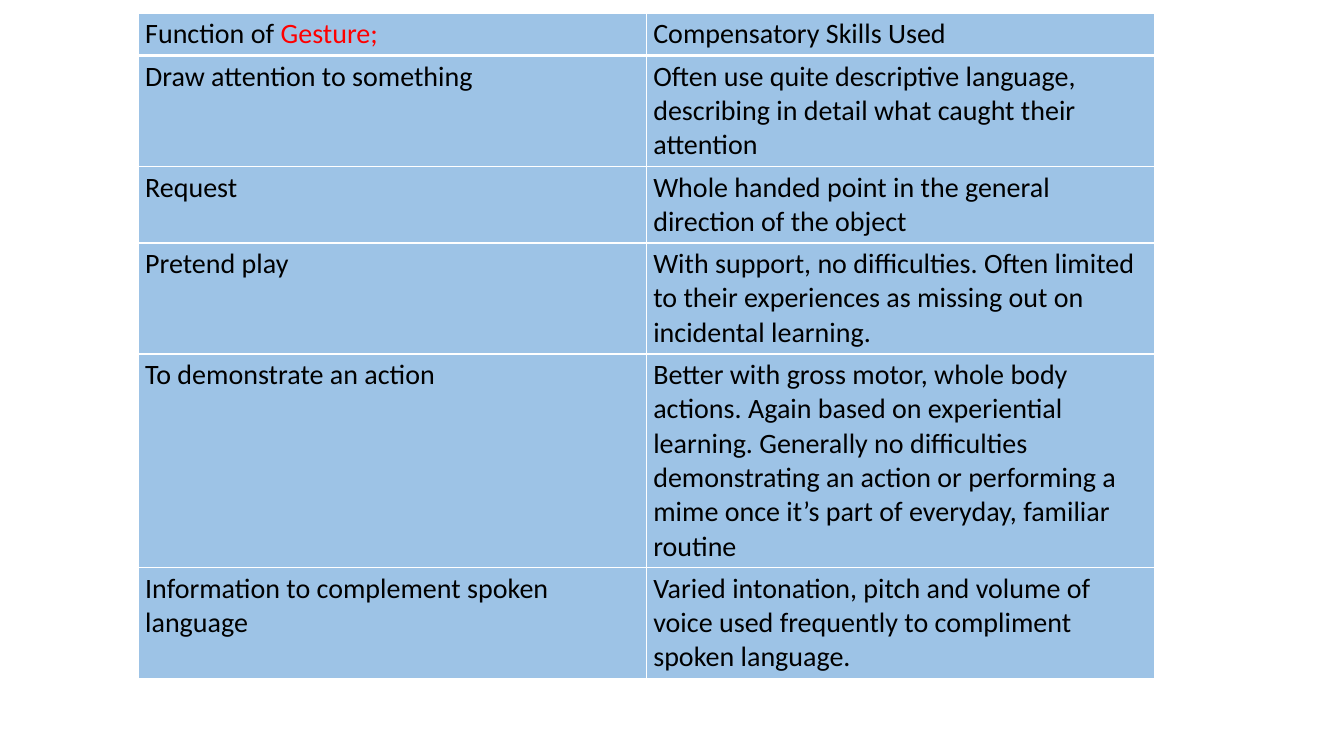
from lxml.etree import SubElement
from pptx import Presentation
from pptx.dml.color import RGBColor
from pptx.oxml.ns import qn
from pptx.util import Inches, Pt

BLACK = RGBColor(0x00, 0x00, 0x00)
RED = RGBColor(0xFF, 0x00, 0x00)
WHITE = RGBColor(0xFF, 0xFF, 0xFF)
SKY = RGBColor(0x9D, 0xC3, 0xE6)

COL_W = 5.04
LINE_H, ROW_PAD = 0.27, 0.09

# Lines of text, function of gesture, compensatory skill
ROWS = [
    (1, "Function of ", "Compensatory Skills Used"),
    (3, "Draw attention to something",
     "Often use quite descriptive language, describing in detail what caught their attention"),
    (2, "Request", "Whole handed point in the general direction of the object"),
    (3, "Pretend play",
     "With support, no difficulties. Often limited to their experiences as missing out on "
     "incidental learning."),
    (6, "To demonstrate an action",
     "Better with gross motor, whole body actions. Again based on experiential learning. "
     "Generally no difficulties demonstrating an action or performing a mime once it’s part "
     "of everyday, familiar routine"),
    (3, "Information to complement spoken language",
     "Varied intonation, pitch and volume of voice used frequently to compliment spoken "
     "language."),
]


def add_text(p, text, size=20, color=BLACK, font="Calibri"):
    r = p.add_run()
    r.text = text
    r.font.size = Pt(size)
    r.font.name = font
    r.font.bold = False
    r.font.color.rgb = color


def set_borders(cell, bottom=1):
    """Draw white lines on all four sides; bottom is a width in points."""
    tcPr = cell._tc.get_or_add_tcPr()
    for side, width in (("L", 1), ("R", 1), ("T", 1), ("B", bottom)):
        ln = SubElement(tcPr, qn(f"a:ln{side}"), w=str(Pt(width)))
        fill = SubElement(ln, qn("a:solidFill"))
        SubElement(fill, qn("a:srgbClr"), val=str(WHITE))


prs = Presentation()
prs.slide_width, prs.slide_height = Inches(13.33), Inches(7.5)
s = prs.slides.add_slide(prs.slide_layouts[6])

frame = s.shapes.add_table(len(ROWS), 2, Inches(1.37), Inches(0.13),
                           Inches(2 * COL_W), Inches(6.45))
table = frame.table
table.horz_banding = False

for i, (lines, *texts) in enumerate(ROWS):
    table.rows[i].height = Inches(ROW_PAD + LINE_H * lines)
    for j, text in enumerate(texts):
        cell = table.cell(i, j)
        cell.margin_left = cell.margin_right = Inches(0.07)
        cell.margin_top = cell.margin_bottom = Inches(0.04)
        set_borders(cell, bottom=3 if i == 0 else 1)
        cell.fill.solid()
        cell.fill.fore_color.rgb = SKY
        add_text(cell.text_frame.paragraphs[0], text)

add_text(table.cell(0, 0).text_frame.paragraphs[0], "Gesture;", color=RED)
frame.height = Inches(6.45)

prs.save("out.pptx")
